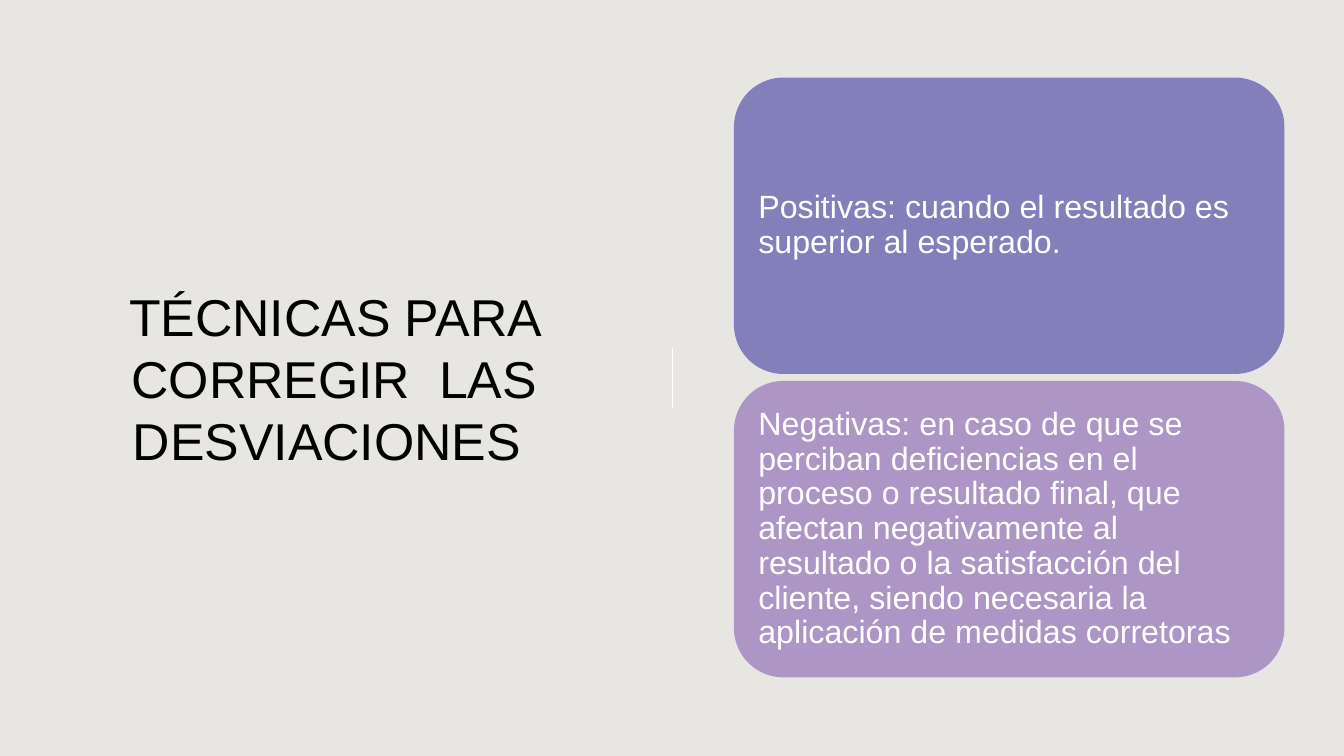
import pptx
import pptx.util
import pptx.dml.color
import pptx.enum.shapes
import pptx.enum.text
from pptx.util import Inches

DEVIATIONS = [
    ("Positivas: cuando el resultado es superior al esperado.", "827FBA"),
    ("Negativas: en caso de que se perciban deficiencias en el proceso o "
     "resultado final, que afectan negativamente al resultado o la "
     "satisfacción del cliente, siendo necesaria la aplicación de medidas "
     "corretoras", "AD96C6"),
]
CARD_TOP = 0.77
CARD_PITCH = 3.01


def color(value):
    return pptx.dml.color.RGBColor.from_string(value)


def paint(fill, value):
    fill.solid()
    fill.fore_color.rgb = color(value)


def write(frame, text, size, text_color, alignment):
    frame.word_wrap = True
    frame.vertical_anchor = pptx.enum.text.MSO_ANCHOR.MIDDLE
    paragraph = frame.paragraphs[0]
    paragraph.alignment = alignment
    run = paragraph.add_run()
    run.text = text
    run.font.name = "Arial"
    run.font.size = pptx.util.Pt(size)
    run.font.color.rgb = color(text_color)
    return paragraph


def add_title(slide, text):
    title = slide.shapes.add_textbox(Inches(1.18), Inches(1.18), Inches(4.27), Inches(5.13))
    write(title.text_frame, text, 37, "000000", pptx.enum.text.PP_ALIGN.CENTER)


def add_divider(slide):
    divider = slide.shapes.add_connector(
        pptx.enum.shapes.MSO_CONNECTOR.STRAIGHT,
        Inches(6.67), Inches(3.45), Inches(6.67), Inches(4.05))
    divider.line.width = pptx.util.Pt(1)
    divider.line.color.rgb = color("FFFFFF")
    properties = divider._element.spPr
    properties.append(pptx.oxml.parse_xml(
        '<a:effectLst xmlns:a="http://schemas.openxmlformats.org/drawingml/2006/main"/>'))


def add_card(slide, top, text, fill):
    card = slide.shapes.add_shape(
        pptx.enum.shapes.MSO_SHAPE.ROUNDED_RECTANGLE,
        Inches(7.28), Inches(top), Inches(5.46), Inches(2.94))
    card.shadow.inherit = False
    paint(card.fill, fill)
    card.line.fill.background()
    frame = card.text_frame
    frame.margin_left = frame.margin_right = Inches(0.1)
    frame.margin_top = frame.margin_bottom = Inches(0.1)
    paragraph = write(frame, text, 23, "FFFFFF", pptx.enum.text.PP_ALIGN.LEFT)
    paragraph.line_spacing = 0.9


def main():
    presentation = pptx.Presentation()
    presentation.slide_width = Inches(13.33)
    presentation.slide_height = Inches(7.5)
    slide = presentation.slides.add_slide(presentation.slide_layouts[6])
    paint(slide.background.fill, "E8E6E2")
    add_title(slide, "TÉCNICAS PARA CORREGIR  LAS DESVIACIONES ")
    add_divider(slide)
    for index, (text, fill) in enumerate(DEVIATIONS):
        add_card(slide, CARD_TOP + index * CARD_PITCH, text, fill)
    presentation.save("out.pptx")


if __name__ == "__main__":
    main()
